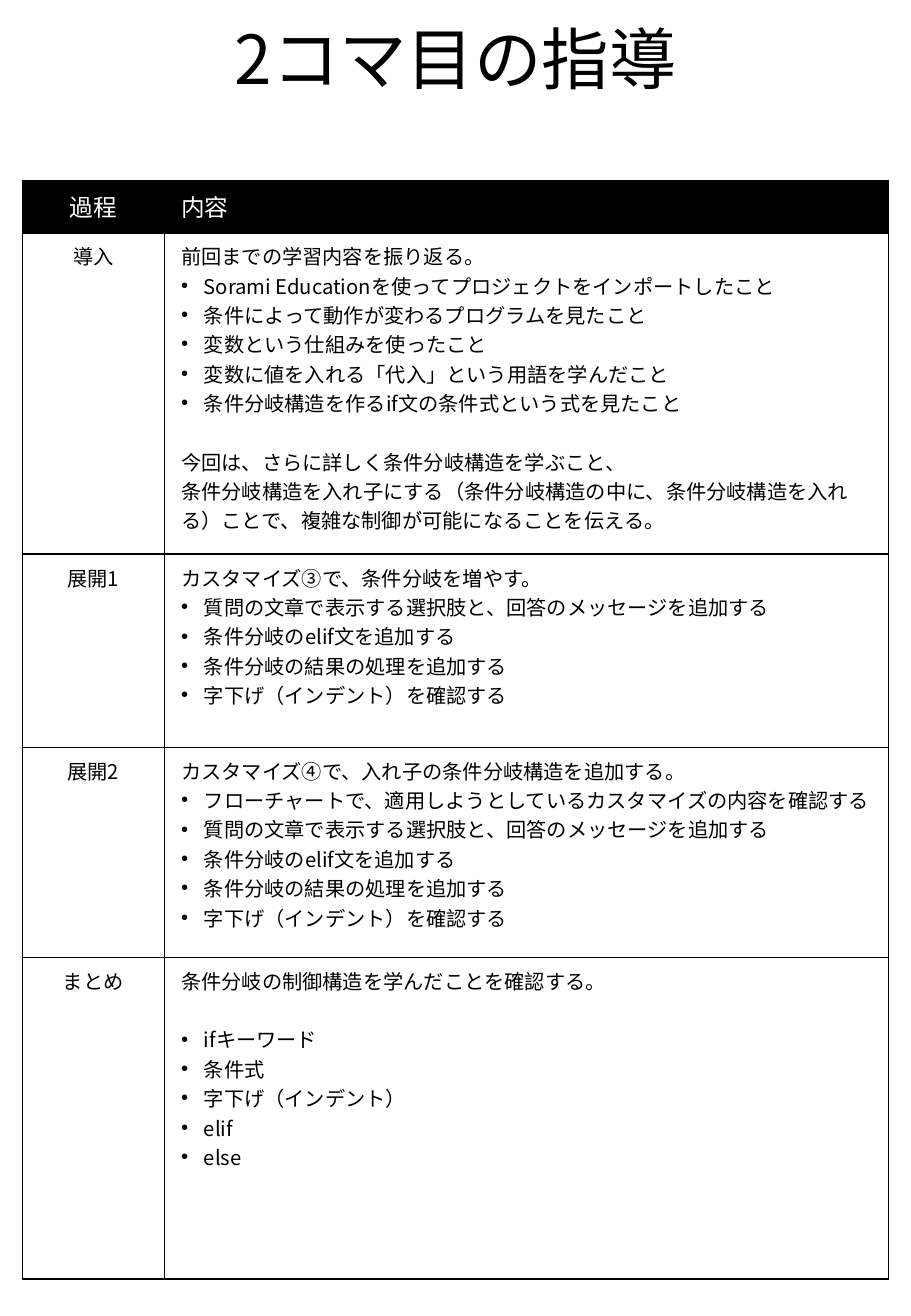
"""Build the lesson plan slide for the second class period."""
from dataclasses import dataclass

from lxml import etree
from pptx import Presentation
from pptx import util as u
from pptx.dml import color
from pptx.enum import text as t
from pptx.oxml import ns

FONT = "Noto Sans CJK JP"
BLACK, WHITE = "000000", "FFFFFF"
BODY_SIZE = 12
BLANK_LINE = 17.4
BULLET_INDENT = 13.5


@dataclass(frozen=True)
class Line:
    text: str
    bullet: bool = False
    gap: float = 0


@dataclass(frozen=True)
class Stage:
    name: str
    height: float
    lines: list[Line]
    size: float = BODY_SIZE
    ink: str = BLACK
    fill: str = WHITE


def bullets(*items: str) -> list[Line]:
    return [Line(item, bullet=True) for item in items]


CUSTOMIZE_STEPS = bullets(
    "質問の文章で表示する選択肢と、回答のメッセージを追加する",
    "条件分岐のelif文を追加する",
    "条件分岐の結果の処理を追加する",
    "字下げ（インデント）を確認する",
)

STAGES = [
    Stage("過程", 31, [Line("内容")], size=14, ink=WHITE, fill=BLACK),
    Stage("導入", 190.5, [
        Line("前回までの学習内容を振り返る。"),
        *bullets(
            "Sorami Educationを使ってプロジェクトをインポートしたこと",
            "条件によって動作が変わるプログラムを見たこと",
            "変数という仕組みを使ったこと",
            "変数に値を入れる「代入」という用語を学んだこと",
            "条件分岐構造を作るif文の条件式という式を見たこと",
        ),
        Line("今回は、さらに詳しく条件分岐構造を学ぶこと、", gap=BLANK_LINE),
        Line("条件分岐構造を入れ子にする（条件分岐構造の中に、条件分岐構造を入れる）"
             "ことで、複雑な制御が可能になることを伝える。"),
    ]),
    Stage("展開1", 114.5, [
        Line("カスタマイズ③で、条件分岐を増やす。"),
        *CUSTOMIZE_STEPS,
    ]),
    Stage("展開2", 124.5, [
        Line("カスタマイズ④で、入れ子の条件分岐構造を追加する。"),
        *bullets("フローチャートで、適用しようとしているカスタマイズの内容を確認する"),
        *CUSTOMIZE_STEPS,
    ]),
    Stage("まとめ", 190.5, [
        Line("条件分岐の制御構造を学んだことを確認する。"),
        Line("ifキーワード", bullet=True, gap=BLANK_LINE),
        *bullets("条件式", "字下げ（インデント）", "elif", "else"),
    ]),
]


def rgb(value: str) -> color.RGBColor:
    return color.RGBColor.from_string(value)


def add_run(paragraph, content: str, size: float, ink: str) -> None:
    run = paragraph.add_run()
    run.text = content
    run.font.size = u.Pt(size)
    run.font.color.rgb = rgb(ink)
    run.font.name = FONT
    east_asian = etree.SubElement(run.font._element, ns.qn("a:ea"))
    east_asian.set("typeface", FONT)


def add_bullet(paragraph) -> None:
    properties = paragraph._p.get_or_add_pPr()
    properties.set("marL", str(u.Pt(BULLET_INDENT)))
    properties.set("indent", str(-u.Pt(BULLET_INDENT)))
    etree.SubElement(properties, ns.qn("a:buFont")).set("typeface", "Arial")
    etree.SubElement(properties, ns.qn("a:buChar")).set("char", "•")


def add_borders(cell) -> None:
    properties = cell._tc.get_or_add_tcPr()
    for position, side in enumerate(("lnL", "lnR", "lnT", "lnB")):
        border = etree.Element(ns.qn(f"a:{side}"), w=str(u.Pt(1)))
        fill = etree.SubElement(border, ns.qn("a:solidFill"))
        etree.SubElement(fill, ns.qn("a:srgbClr")).set("val", BLACK)
        properties.insert(position, border)


def fill_cell(cell, lines: list[Line], stage: Stage, align: t.PP_ALIGN) -> None:
    cell.margin_left = cell.margin_right = u.Pt(10)
    cell.margin_top = cell.margin_bottom = u.Pt(5)
    cell.fill.solid()
    cell.fill.fore_color.rgb = rgb(stage.fill)
    add_borders(cell)
    frame = cell.text_frame
    for index, line in enumerate(lines):
        paragraph = frame.add_paragraph() if index else frame.paragraphs[0]
        paragraph.alignment = align
        if line.gap:
            paragraph.space_before = u.Pt(line.gap)
        if line.bullet:
            add_bullet(paragraph)
        add_run(paragraph, line.text, stage.size, stage.ink)


def add_title(slide) -> None:
    title = slide.shapes.add_textbox(u.Pt(40.5), u.Pt(4.5), u.Pt(459), u.Pt(58))
    frame = title.text_frame
    frame.word_wrap = True
    frame.vertical_anchor = t.MSO_ANCHOR.BOTTOM
    heading = frame.paragraphs[0]
    heading.alignment = t.PP_ALIGN.CENTER
    heading.line_spacing = 0.9
    add_run(heading, "2コマ目の指導", 40, BLACK)


def add_plan(slide) -> None:
    widths = (84.2, 429.2)
    height = sum(stage.height for stage in STAGES)
    plan = slide.shapes.add_table(
        len(STAGES), len(widths),
        u.Pt(13.2), u.Pt(107), u.Pt(sum(widths)), u.Pt(height),
    ).table
    plan.first_row = plan.horz_banding = False
    for column, width in zip(plan.columns, widths):
        column.width = u.Pt(width)
    for row, stage in zip(plan.rows, STAGES):
        row.height = u.Pt(stage.height)
        name_cell, content_cell = row.cells
        fill_cell(name_cell, [Line(stage.name)], stage, t.PP_ALIGN.CENTER)
        fill_cell(content_cell, stage.lines, stage, t.PP_ALIGN.LEFT)


def main() -> None:
    deck = Presentation()
    deck.slide_width, deck.slide_height = u.Pt(540), u.Pt(780)
    slide = deck.slides.add_slide(deck.slide_layouts[6])
    add_title(slide)
    add_plan(slide)
    deck.save("out.pptx")


if __name__ == "__main__":
    main()
